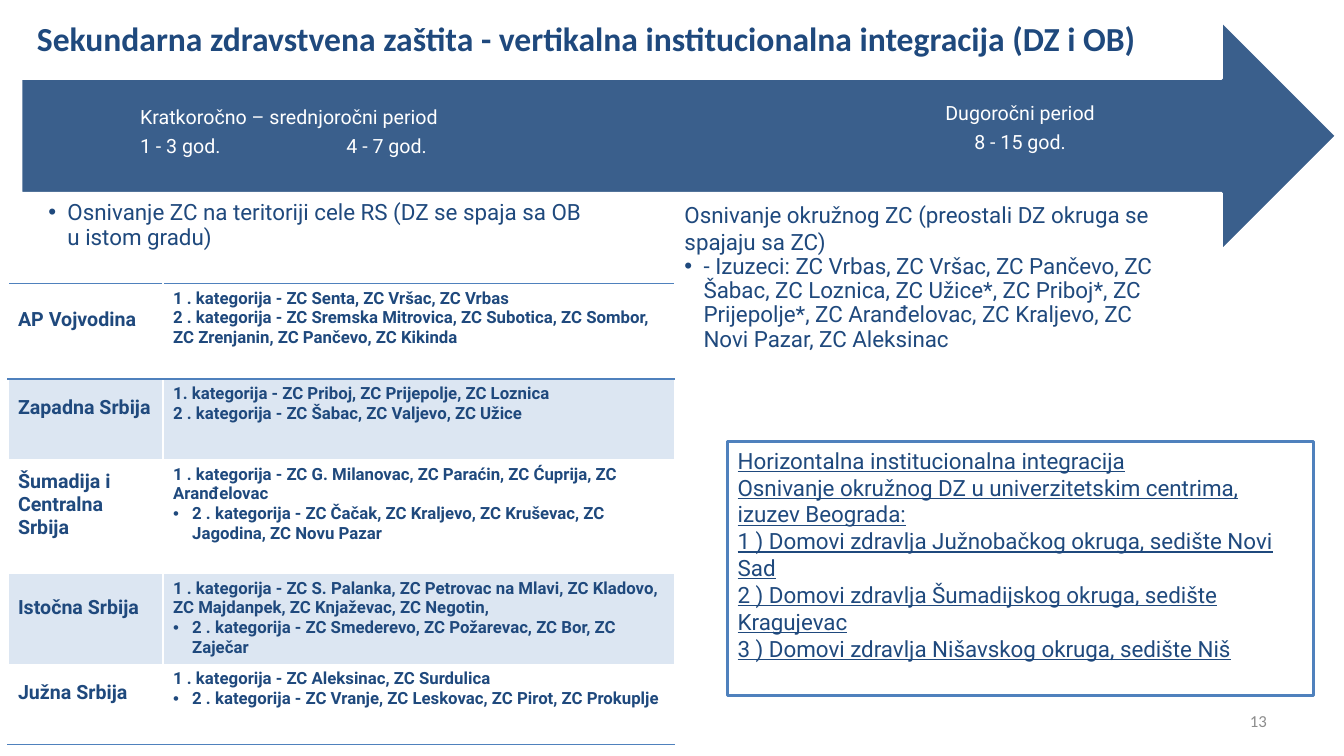
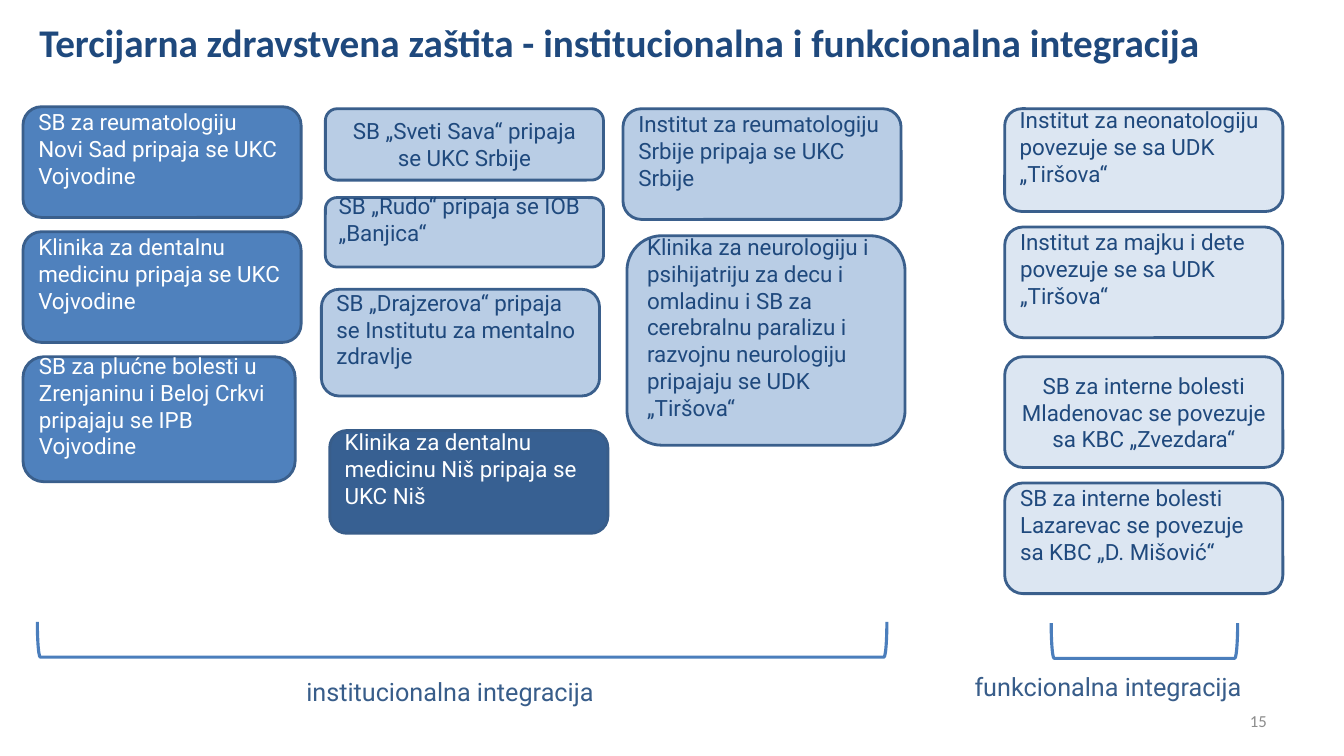
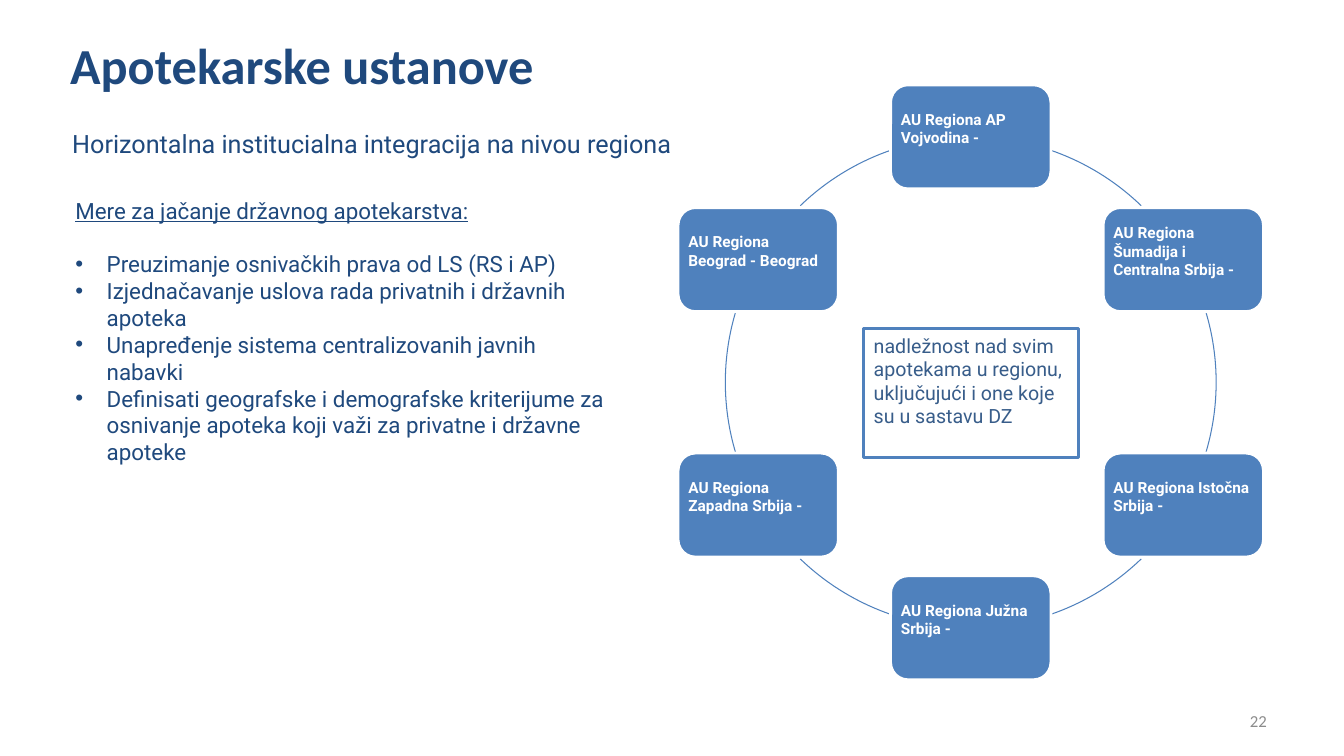
from dataclasses import dataclass
from math import cos, radians, sin
from typing import NamedTuple

from lxml.etree import SubElement
from pptx import Presentation
from pptx.dml.color import RGBColor
from pptx.enum.shapes import MSO_SHAPE as Preset
from pptx.enum.text import MSO_ANCHOR as Anchor, MSO_AUTO_SIZE as AutoSize, PP_ALIGN as Align
from pptx.oxml import parse_xml
from pptx.oxml.ns import nsdecls, qn
from pptx.util import Cm, Pt


class Box(NamedTuple):
    left: int
    top: int
    width: int
    height: int


class TextStyle(NamedTuple):
    size: float
    color: str
    bold: bool = False
    underline: bool = False
    font: str = "Roboto"


@dataclass(frozen=True)
class Theme:
    navy: str = "1F497D"
    steel: str = "3A5F8C"
    slate: str = "385D8A"
    deep: str = "376092"
    blue: str = "4F81BD"
    bracket: str = "4B7EBC"
    light: str = "B9CDE5"
    pale: str = "DCE6F2"
    white: str = "FFFFFF"
    number: TextStyle = TextStyle(12, "8C8C8C", font="Calibri")
    body: TextStyle = TextStyle(16, navy)
    heading: TextStyle = TextStyle(16, navy, underline=True)
    subtitle: TextStyle = TextStyle(18, navy)
    caption: TextStyle = TextStyle(18, slate)
    note: TextStyle = TextStyle(14, slate)
    period: TextStyle = TextStyle(14, white)
    region: TextStyle = TextStyle(14, navy, bold=True)
    category: TextStyle = TextStyle(12, navy, bold=True)
    node: TextStyle = TextStyle(11, white, bold=True)

    def title(self, size):
        return TextStyle(size, self.navy, bold=True, font="Calibri")


THEME = Theme()
INSETS = (0.25, 0.13, 0.25, 0.13)
NO_INSETS = (0, 0, 0, 0)


def cm_box(*lengths):
    return Box(*map(Cm, lengths))


def rgb(color):
    return RGBColor.from_string(color)


def style_paragraph(paragraph, style, align=Align.LEFT):
    paragraph.alignment = align
    paragraph.space_before = Pt(0)
    for run in paragraph.runs:
        font = run.font
        font.name, font.size = style.font, Pt(style.size)
        font.bold, font.underline = style.bold, style.underline
        font.color.rgb = rgb(style.color)


def write(frame, text, style, align=Align.LEFT, anchor=Anchor.TOP, insets=INSETS):
    frame.text = text
    frame.word_wrap = True
    frame.auto_size = AutoSize.NONE
    frame.vertical_anchor = anchor
    (frame.margin_left, frame.margin_top,
     frame.margin_right, frame.margin_bottom) = map(Cm, insets)
    for paragraph in frame.paragraphs:
        style_paragraph(paragraph, style, align)


def set_bullet(paragraph, hang=0):
    properties = paragraph._p.get_or_add_pPr()
    properties.set("marL", str(Cm(hang)))
    properties.set("indent", str(-Cm(hang)))
    if hang:
        SubElement(properties, qn("a:buFont")).set("typeface", "Arial")
        SubElement(properties, qn("a:buChar")).set("char", "•")
    else:
        SubElement(properties, qn("a:buNone"))


def add_text(slide, box, text, style, **layout):
    frame = slide.shapes.add_textbox(*box).text_frame
    write(frame, text, style, **layout)
    return frame


def add_preset(slide, preset, box, fill, line, line_width=2):
    shape = slide.shapes.add_shape(preset, *box)
    shape.shadow.inherit = False
    if fill:
        shape.fill.solid()
        shape.fill.fore_color.rgb = rgb(fill)
    else:
        shape.fill.background()
    shape.line.color.rgb = rgb(line)
    shape.line.width = Pt(line_width)
    return shape


def move(placeholder, box):
    placeholder.left, placeholder.top, placeholder.width, placeholder.height = box


def start_slide(deck, layout, title, title_box, title_size, number):
    slide = deck.slides.add_slide(deck.slide_layouts[layout])
    move(slide.shapes.title, title_box)
    write(slide.shapes.title.text_frame, title, THEME.title(title_size))
    add_text(slide, cm_box(24.28, 17.65, 7.9, 1.02), str(number), THEME.number,
             align=Align.RIGHT, anchor=Anchor.MIDDLE)
    return slide


def fill_list(placeholder, box, lead, items, hang, spacing=1.0, insets=NO_INSETS):
    move(placeholder, box)
    frame = placeholder.text_frame
    write(frame, "\n".join([*lead, *items]), THEME.body, insets=insets)
    for index, paragraph in enumerate(frame.paragraphs):
        bulleted = index >= len(lead)
        set_bullet(paragraph, hang if bulleted else 0)
        paragraph.line_spacing = spacing if bulleted else 1.0
    return frame


def add_period_arrow(slide, box):
    add_preset(slide, Preset.RIGHT_ARROW, box, THEME.steel, THEME.white)
    periods = (
        (3, 2.19, 13.79, Align.LEFT, "Kratkoročno – srednjoročni period\n1 - 3 god.\t4 - 7 god."),
        (19.92, 2.09, 10.52, Align.CENTER, "Dugoročni period\n8 - 15 god."),
    )
    for left, top, width, align, text in periods:
        label_box = Box(box.left + Cm(left), box.top + Cm(top), Cm(width), Cm(1.6))
        frame = add_text(slide, label_box, text, THEME.period, align=align, insets=NO_INSETS)
        for paragraph in frame.paragraphs:
            paragraph.line_spacing = 0.9
            paragraph.space_after = Pt(5)
            if "\t" in paragraph.text:
                tabs = SubElement(paragraph._p.get_or_add_pPr(), qn("a:tabLst"))
                tab = SubElement(tabs, qn("a:tab"))
                tab.set("pos", str(Cm(5.2)))
                tab.set("algn", "l")


def add_border(cell, side):
    border = parse_xml(
        f'<a:{side} {nsdecls("a")} w="{Pt(1)}"><a:solidFill>'
        f'<a:srgbClr val="{THEME.blue}"/></a:solidFill></a:{side}>')
    cell._tc.get_or_add_tcPr().insert(0, border)


def add_region_table(slide, box, regions):
    table = slide.shapes.add_table(len(regions), 2, *box).table
    table.first_row = table.horz_banding = False
    table.columns[0].width = Cm(3.91)
    table.columns[1].width = box.width - Cm(3.91)
    last = len(regions) - 1
    for index, (height, region, categories, bulleted) in enumerate(regions):
        table.rows[index].height = Cm(height)
        region_cell, category_cell = table.cell(index, 0), table.cell(index, 1)
        region_cell.text_frame.text = region
        region_cell.vertical_anchor = Anchor.MIDDLE
        region_cell.margin_bottom = Cm(0.7)
        category_cell.text_frame.text = categories
        if bulleted:
            set_bullet(category_cell.text_frame.paragraphs[-1], 0.48)
        for cell, style in ((region_cell, THEME.region), (category_cell, THEME.category)):
            for paragraph in cell.text_frame.paragraphs:
                style_paragraph(paragraph, style)
            if index % 2:
                cell.fill.solid()
                cell.fill.fore_color.rgb = rgb(THEME.pale)
            else:
                cell.fill.background()
            if index in (0, last):
                add_border(cell, "lnB")
            if index < 2:
                add_border(cell, "lnT")


def add_panel(slide, box, text, style):
    panel = add_preset(slide, Preset.RECTANGLE, box, THEME.white, THEME.blue)
    write(panel.text_frame, text, style)


def add_institution(slide, box, text, fill, line, color, centred):
    card = add_preset(slide, Preset.ROUNDED_RECTANGLE, box, fill, line)
    write(card.text_frame, text, TextStyle(16, color), anchor=Anchor.MIDDLE,
          align=Align.CENTER if centred else Align.LEFT,
          insets=INSETS if centred else (0.25, 0.13, 0.25, 0.81))


def add_bracket(slide, box):
    upright = Box(box.left + (box.width - box.height) // 2,
                  box.top + (box.height - box.width) // 2, box.height, box.width)
    add_preset(slide, Preset.RIGHT_BRACKET, upright, None, THEME.bracket, 2.25).rotation = 90


def add_region_ring(slide, box, regions):
    for start, end in ((343, 17), (46, 71), (109, 134), (163, 197), (226, 251), (289, 314)):
        arc = add_preset(slide, Preset.ARC, box, None, THEME.blue, 0.75)
        arc.adjustments[0], arc.adjustments[1] = start * 0.6, end * 0.6
    width, height = Cm(4.04), Cm(2.62)
    for index, region in enumerate(regions):
        angle = radians(360 * index / len(regions) - 90)
        node_box = Box(
            int(box.left + box.width / 2 * (1 + cos(angle)) - width / 2),
            int(box.top + box.height / 2 * (1 + sin(angle)) - height / 2), width, height)
        node = add_preset(slide, Preset.ROUNDED_RECTANGLE, node_box, THEME.blue, THEME.white)
        write(node.text_frame, region, THEME.node, anchor=Anchor.MIDDLE,
              insets=(0.13, 0.13, 0.13, 0.56))


def build_secondary_care(deck):
    slide = start_slide(
        deck, 3, "Sekundarna zdravstvena zaštita - vertikalna institucionalna integracija (DZ i OB)",
        cm_box(0.68, 0.33, 31, 1.27), 24, 13)
    add_period_arrow(slide, cm_box(0.53, 0.53, 33.15, 5.79))
    fill_list(slide.placeholders[1], cm_box(1.22, 5.08, 13.54, 1.9), [],
              ["Osnivanje ZC na teritoriji cele RS (DZ se spaja sa OB u istom gradu)"], 0.48, 0.9)
    fill_list(slide.placeholders[2], cm_box(17.25, 5.08, 12.45, 3.81),
              ["Osnivanje okružnog ZC (preostali DZ okruga se spajaju sa ZC)"],
              ["- Izuzeci: ZC Vrbas, ZC Vršac, ZC Pančevo, ZC Šabac, ZC Loznica, ZC Užice*, "
               "ZC Priboj*, ZC Prijepolje*, ZC Aranđelovac, ZC Kraljevo, ZC Novi Pazar, "
               "ZC Aleksinac"], 0.48, 0.9)
    add_region_table(slide, cm_box(0.2, 7.14, 16.79, 11.63), (
        (2.41, "AP Vojvodina",
         "1 . kategorija - ZC Senta, ZC Vršac, ZC Vrbas\n"
         "2 . kategorija - ZC Sremska Mitrovica, ZC Subotica, ZC Sombor, ZC Zrenjanin, "
         "ZC Pančevo, ZC Kikinda", False),
        (2.03, "Zapadna Srbija",
         "1. kategorija - ZC Priboj, ZC Prijepolje, ZC Loznica\n"
         "2 . kategorija - ZC Šabac, ZC Valjevo, ZC Užice", False),
        (2.87, "Šumadija i Centralna Srbija",
         "1 . kategorija - ZC G. Milanovac, ZC Paraćin, ZC Ćuprija, ZC Aranđelovac\n"
         "2 . kategorija - ZC Čačak, ZC Kraljevo, ZC Kruševac, ZC Jagodina, ZC Novu Pazar", True),
        (2.29, "Istočna Srbija",
         "1 . kategorija - ZC S. Palanka, ZC Petrovac na Mlavi, ZC Kladovo, ZC Majdanpek, "
         "ZC Knjaževac, ZC Negotin,\n"
         "2 . kategorija - ZC Smederevo, ZC Požarevac, ZC Bor, ZC Zaječar", True),
        (2.03, "Južna Srbija",
         "1 . kategorija - ZC Aleksinac, ZC Surdulica\n"
         "2 . kategorija - ZC Vranje, ZC Leskovac, ZC Pirot, ZC Prokuplje", True),
    ))
    add_panel(slide, cm_box(18.34, 11.13, 14.76, 6.4),
              "Horizontalna institucionalna integracija\n"
              "Osnivanje okružnog DZ u univerzitetskim centrima, izuzev Beograda:\n"
              "1 ) Domovi zdravlja Južnobačkog okruga, sedište Novi Sad\n"
              "2 ) Domovi zdravlja Šumadijskog okruga, sedište Kragujevac\n"
              "3 ) Domovi zdravlja Nišavskog okruga, sedište Niš", THEME.heading)


def build_tertiary_care(deck):
    slide = start_slide(
        deck, 5, "Tercijarna zdravstvena zaštita - institucionalna i funkcionalna integracija",
        cm_box(0.74, 0.33, 31.19, 1.27), 28, 15)
    groups = (
        (THEME.blue, THEME.steel, THEME.white, (
            (0.58, 2.69, 7.01, 2.79, "SB za reumatologiju Novi Sad pripaja se UKC Vojvodine"),
            (0.58, 5.84, 7.01, 2.79, "Klinika za dentalnu medicinu pripaja se UKC Vojvodine"),
            (0.58, 8.99, 6.86, 3.15,
             "SB za plućne bolesti u Zrenjaninu i Beloj Crkvi pripajaju se IPB Vojvodine"))),
        (THEME.light, THEME.steel, THEME.navy, (
            (8.2, 2.74, 7.01, 1.8, "SB „Sveti Sava“ pripaja se UKC Srbije"),
            (8.2, 4.98, 7.01, 1.75, "SB „Rudo“ pripaja se IOB „Banjica“"),
            (8.1, 7.29, 7.01, 2.69, "SB „Drajzerova“ pripaja se Institutu za mentalno zdravlje"),
            (15.7, 2.74, 7.01, 2.79, "Institut za reumatologiju Srbije pripaja se UKC Srbije"),
            (15.8, 5.94, 7.01, 5.28,
             "Klinika za neurologiju i psihijatriju za decu i omladinu i SB za cerebralnu "
             "paralizu i razvojnu neurologiju pripajaju se UDK „Tiršova“"))),
        (THEME.deep, THEME.slate, THEME.white, (
            (8.31, 10.85, 7.01, 2.59, "Klinika za dentalnu medicinu Niš pripaja se UKC Niš"),)),
        (THEME.pale, THEME.steel, THEME.navy, (
            (25.32, 2.74, 7.01, 2.59, "Institut za neonatologiju povezuje se sa UDK „Tiršova“"),
            (25.32, 5.72, 7.01, 2.79, "Institut za majku i dete povezuje se sa UDK „Tiršova“"),
            (25.32, 8.99, 7.01, 2.79,
             "SB za interne bolesti Mladenovac se povezuje sa KBC „Zvezdara“"),
            (25.32, 12.17, 7.01, 2.79,
             "SB za interne bolesti Lazarevac se povezuje sa KBC „D. Mišović“"))),
    )
    for fill, line, color, institutions in groups:
        for *lengths, text in institutions:
            centred = "Sveti Sava" in text or "Mladenovac" in text
            add_institution(slide, cm_box(*lengths), text, fill, line, color, centred)
    add_bracket(slide, cm_box(0.94, 15.67, 21.41, 0.89))
    add_text(slide, cm_box(7.47, 16.92, 9.68, 1.02), "institucionalna integracija", THEME.caption)
    add_bracket(slide, cm_box(26.49, 15.7, 4.7, 0.89))
    add_text(slide, cm_box(24.31, 16.79, 8.66, 1.02), "funkcionalna integracija", THEME.caption)


def build_pharmacies(deck):
    slide = start_slide(deck, 1, "Apotekarske ustanove", cm_box(1.52, 0.74, 21.59, 1.9), 36, 22)
    add_text(slide, cm_box(1.57, 3.1, 19.18, 1.02),
             "Horizontalna institucialna integracija na nivou regiona", THEME.subtitle)
    measures = fill_list(
        slide.placeholders[1], cm_box(1.65, 4.83, 14.1, 7.09),
        ["Mere za jačanje državnog apotekarstva:"],
        ["Preuzimanje osnivačkih prava od LS (RS i AP)",
         "Izjednačavanje uslova rada privatnih i državnih apoteka",
         "Unapređenje sistema centralizovanih javnih nabavki",
         "Definisati geografske i demografske kriterijume za osnivanje apoteka koji važi "
         "za privatne i državne apoteke"], 0.79, insets=INSETS)
    style_paragraph(measures.paragraphs[0], THEME.heading)
    measures.paragraphs[0].space_after = Pt(19)
    add_region_ring(slide, cm_box(18.28, 3.45, 12.37, 12.37), (
        "AU Regiona AP Vojvodina -", "AU Regiona Šumadija i Centralna Srbija -",
        "AU Regiona Istočna Srbija -", "AU Regiona Južna Srbija -",
        "AU Regiona Zapadna Srbija -", "AU Regiona Beograd - Beograd"))
    add_panel(slide, cm_box(21.77, 8.28, 5.41, 3.25),
              "nadležnost nad svim apotekama u regionu, uključujući i one koje su u sastavu DZ",
              THEME.note)


def main():
    deck = Presentation()
    deck.slide_width, deck.slide_height = Cm(33.87), Cm(19.05)
    build_secondary_care(deck)
    build_tertiary_care(deck)
    build_pharmacies(deck)
    deck.save("out.pptx")


if __name__ == "__main__":
    main()
